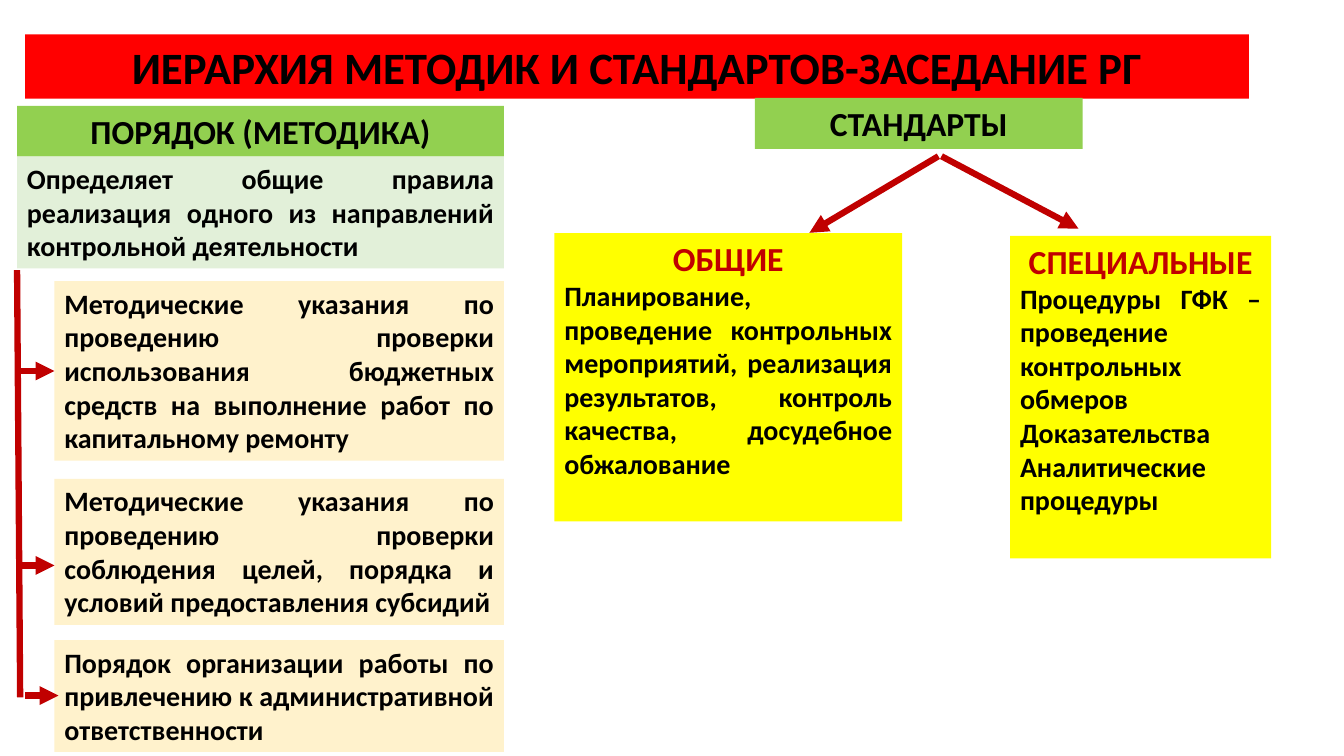
import pptx
import pptx.dml.color
import pptx.enum.shapes
import pptx.enum.text
import pptx.oxml.ns
import pptx.util
from lxml import etree

Pt = pptx.util.Pt
ALIGN = pptx.enum.text.PP_ALIGN
FIT = pptx.enum.text.MSO_AUTO_SIZE
BLACK, DARK_RED = "000000", "C00000"
RED, GREEN, PALE_GREEN = "FF0000", "92D050", "E2F0D9"
YELLOW, CREAM = "FFFF00", "FFF2CC"


def color(value):
    return pptx.dml.color.RGBColor.from_string(value)


def write(paragraph, text, size=20, ink=BLACK, align=ALIGN.JUSTIFY):
    paragraph.alignment = align
    run = paragraph.add_run()
    run.text = text
    run.font.name = "Calibri"
    run.font.size = Pt(size)
    run.font.bold = True
    run.font.color.rgb = color(ink)


def add_panel(slide, left, top, width, height, fill, fit=FIT.SHAPE_TO_FIT_TEXT):
    panel = slide.shapes.add_shape(
        pptx.enum.shapes.MSO_SHAPE.RECTANGLE, Pt(left), Pt(top), Pt(width), Pt(height))
    panel.shadow.inherit = False
    panel.fill.solid()
    panel.fill.fore_color.rgb = color(fill)
    panel.line.fill.background()
    frame = panel.text_frame
    frame.word_wrap = True
    frame.auto_size = fit
    frame.vertical_anchor = pptx.enum.text.MSO_ANCHOR.TOP
    return panel


def add_heading(slide, text, left, top, width, height, fill, size=24):
    panel = add_panel(slide, left, top, width, height, fill)
    write(panel.text_frame.paragraphs[0], text, size=size, align=ALIGN.CENTER)


def add_description(slide, text, left, top, width, height, fill):
    panel = add_panel(slide, left, top, width, height, fill)
    write(panel.text_frame.paragraphs[0], text)
    return panel


def add_standard(slide, title, lines, left, top, width, height):
    frame = add_panel(slide, left, top, width, height, YELLOW, FIT.NONE).text_frame
    write(frame.paragraphs[0], title, size=24, ink=DARK_RED, align=ALIGN.CENTER)
    for line in lines:
        write(frame.add_paragraph(), line)


def add_line(slide, x1, y1, x2, y2, arrow=True):
    connector = slide.shapes.add_connector(
        pptx.enum.shapes.MSO_CONNECTOR.STRAIGHT, Pt(x1), Pt(y1), Pt(x2), Pt(y2))
    connector.line.color.rgb = color(DARK_RED)
    connector.line.width = Pt(4.5)
    qn = pptx.oxml.ns.qn
    if arrow:
        etree.SubElement(connector.line._get_or_add_ln(), qn("a:tailEnd"), type="triangle")
    etree.SubElement(connector._element.spPr, qn("a:effectLst"))
    return connector


def main():
    presentation = pptx.Presentation()
    presentation.slide_width = Pt(960)
    presentation.slide_height = Pt(540)
    slide = presentation.slides.add_slide(presentation.slide_layouts[6])

    add_heading(slide, "ИЕРАРХИЯ МЕТОДИК И СТАНДАРТОВ-ЗАСЕДАНИЕ РГ",
                18, 24.5, 874, 46, RED, size=32)
    add_heading(slide, "ПОРЯДОК (МЕТОДИКА)", 12.2, 75.6, 347.8, 36.4, GREEN)
    add_heading(slide, "СТАНДАРТЫ", 539.3, 70, 234, 36.4, GREEN)
    add_description(
        slide, "Определяет общие правила реализация одного из направлений "
        "контрольной деятельности", 12.2, 111.8, 347.8, 80, PALE_GREEN)

    add_standard(
        slide, "ОБЩИЕ",
        ["Планирование, проведение контрольных мероприятий, реализация "
         "результатов, контроль качества, досудебное обжалование"],
        396, 166.5, 248.4, 206)
    add_standard(
        slide, "СПЕЦИАЛЬНЫЕ",
        ["Процедуры ГФК – проведение контрольных обмеров",
         "Доказательства", "Аналитические процедуры"],
        721.5, 168.5, 186.5, 230.4)

    guidelines = [
        ("Методические указания по проведению проверки использования бюджетных "
         "средств на выполнение работ по капитальному ремонту", 200.9, 128.2),
        ("Методические указания по проведению проверки соблюдения целей, порядка "
         "и условий предоставления субсидий", 342, 104.4),
        ("Порядок организации работы по привлечению к административной "
         "ответственности", 457.2, 80),
    ]
    repair, subsidies, liability = [
        add_description(slide, text, 38.9, top, 321.1, height, CREAM)
        for text, top, height in guidelines]

    add_line(slide, 670.3, 111.6, 578.2, 166.3)
    add_line(slide, 672.5, 111.6, 770.4, 163.4)
    add_line(slide, 12.2, 193, 14.4, 498.2, arrow=False)
    add_line(slide, 14.4, 265, 38.9, 265).end_connect(repair, 1)
    add_line(slide, 14.4, 403.9, 38.9, 403.9)
    add_line(slide, 18, 496.8, 41.8, 496.8)

    presentation.save("out.pptx")


if __name__ == "__main__":
    main()
